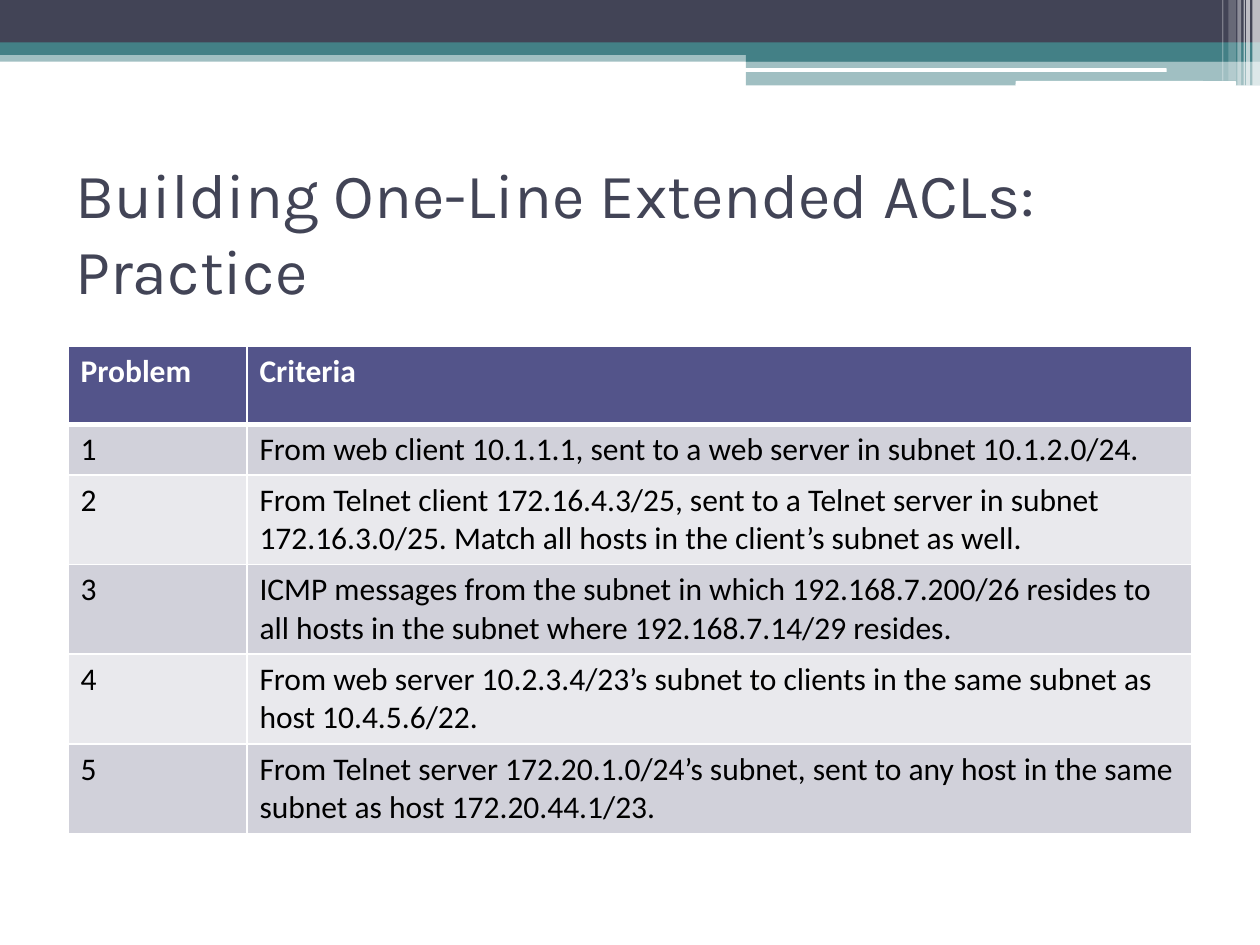
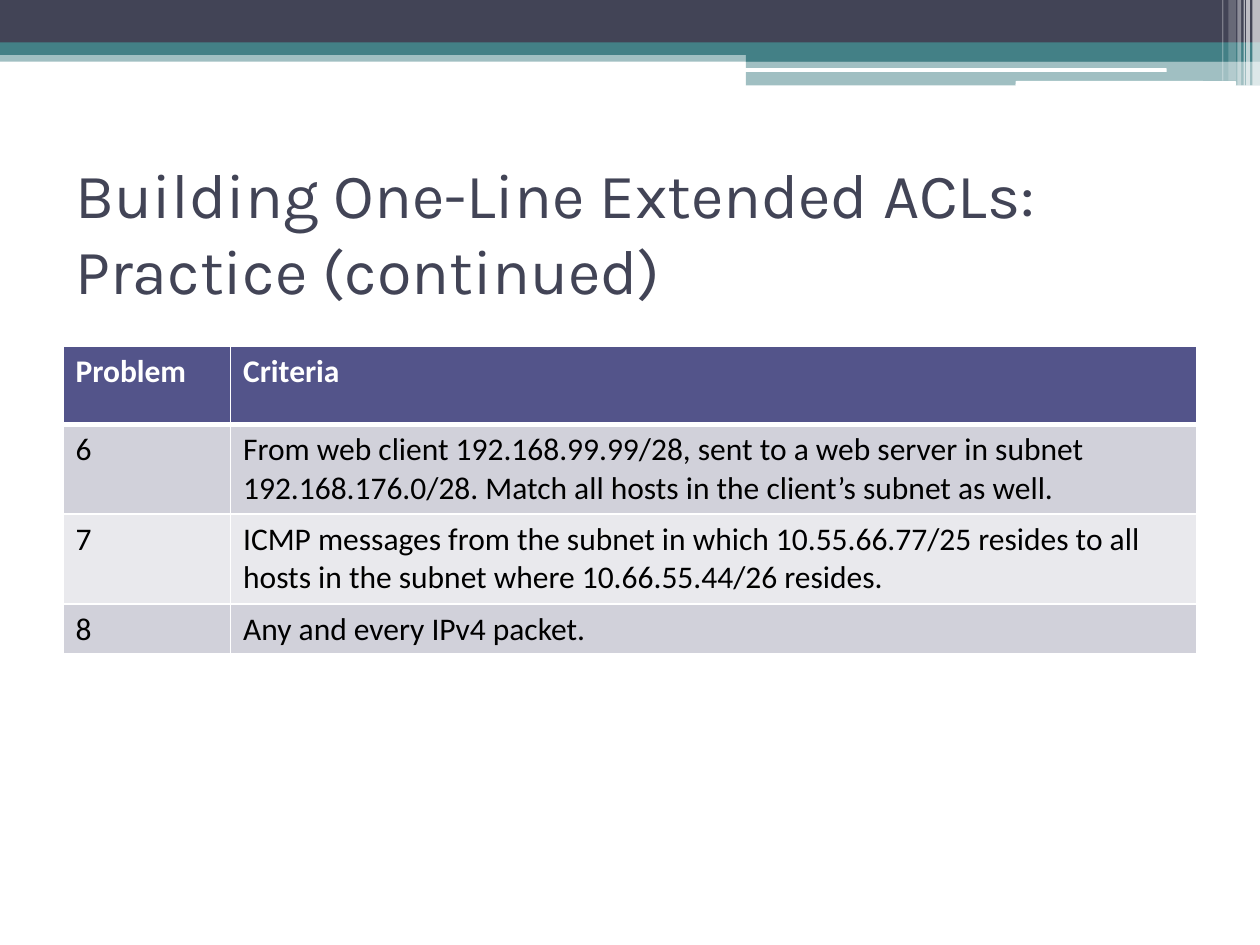
from dataclasses import dataclass
from pptx import Presentation
from pptx.dml.color import RGBColor as RGB
from pptx.enum.shapes import MSO_SHAPE as SHAPE
from pptx.enum.text import MSO_ANCHOR as ANCHOR
from pptx.oxml.ns import qn
from pptx.util import Pt
from lxml.etree import SubElement, Element

HEADER = ("Problem", "Criteria")
SLIDES = [
    {
        "title": "Building One-Line Extended ACLs: Practice",
        "columns": (102.24, 540),
        "problems": [
            "From web client 10.1.1.1, sent to a web server in subnet 10.1.2.0/24.",
            "From Telnet client 172.16.4.3/25, sent to a Telnet server in subnet 172.16.3.0/25. "
            "Match all hosts in the client’s subnet as well.",
            "ICMP messages from the subnet in which 192.168.7.200/26 resides to all hosts "
            "in the subnet where 192.168.7.14/29 resides.",
            "From web server 10.2.3.4/23’s subnet to clients in the same subnet as host 10.4.5.6/22.",
            "From Telnet server 172.20.1.0/24’s subnet, sent to any host in the same subnet "
            "as host 172.20.44.1/23.",
        ],
    },
    {
        "title": "Building One-Line Extended ACLs: Practice (continued)",
        "columns": (95.76, 552.24),
        "problems": [
            "From web client 192.168.99.99/28, sent to a web server in subnet 192.168.176.0/28. "
            "Match all hosts in the client’s subnet as well.",
            "ICMP messages from the subnet in which 10.55.66.77/25 resides to all hosts "
            "in the subnet where 10.66.55.44/26 resides.",
            "Any and every IPv4 packet.",
        ],
    },
]


@dataclass(frozen=True)
class Theme:
    ink: str = "424456"
    teal: str = "438086"
    white: str = "FFFFFF"
    black: str = "000000"
    header: str = "53548A"
    bands: tuple = ("D1D1DA", "E9E9ED")
    title_font: str = "Karla"
    body_font: str = "Calibri"
    title_size: int = 36
    body_size: int = 18
    thin: int = 1
    thick: int = 3


T = Theme()
WIDTH, HEIGHT = 720, 540
TITLE_BOX = (36, 90, 648, 84)
TABLE_TOP = 198
HEADER_ROW, ONE_LINE_ROW, TWO_LINE_ROW = 44.64, 28, 51.2
LINE_CHARS = 72

TAB_LEFT = 426.24
TAB_WIDTH = WIDTH - TAB_LEFT
BANDS = [
    (SHAPE.RECTANGLE, (0, 28.8, WIDTH, 6.5), T.teal, 50),
    (SHAPE.RECTANGLE, (0, 0, WIDTH, 24.48), T.ink, 100),
    (SHAPE.RECTANGLE, (0, 24.2, WIDTH, 7.2), T.teal, 100),
    (SHAPE.RECTANGLE, (TAB_LEFT, 28.08, TAB_WIDTH, 7.2), T.teal, 100),
    (SHAPE.RECTANGLE, (TAB_LEFT, 34.9, TAB_WIDTH, 14), T.teal, 50),
    (SHAPE.ROUNDED_RECTANGLE, (425.5, 39, 241.2, 2.16), T.white, 100),
    (SHAPE.ROUNDED_RECTANGLE, (580.32, 46.3, 126, 2.8), T.white, 100),
]
STRIPES = [
    (715.68, 4.32, 48.96, 65),
    (712.08, 2.16, 48.96, 65),
    (710.64, 0.72, 48.96, 60),
    (707.04, 2.16, 48.96, 40),
    (702, 4.32, 46.08, 20),
    (698.4, 0.72, 46.08, 30),
]
BANDS += [(SHAPE.RECTANGLE, (x, 0, w, h), T.white, a) for x, w, h, a in STRIPES]


def add_band(s, kind, box, color, opacity):
    sp = s.shapes.add_shape(kind, *map(Pt, box))
    sp.shadow.inherit = False
    sp.line.fill.background()
    sp.fill.solid()
    sp.fill.fore_color.rgb = RGB.from_string(color)
    if opacity < 100:
        clr = sp.fill._xPr.find(".//" + qn("a:srgbClr"))
        SubElement(clr, qn("a:alpha"), val=str(opacity * 1000))


def write(tf, text, color, **font):
    r = tf.paragraphs[0].add_run()
    r.text = text
    r.font.color.rgb = RGB.from_string(color)
    for name, value in font.items():
        setattr(r.font, name, value)


def add_title(s, text):
    tf = s.shapes.add_textbox(*map(Pt, TITLE_BOX)).text_frame
    tf.word_wrap = True
    tf.vertical_anchor = ANCHOR.MIDDLE
    write(tf, text, T.ink, name=T.title_font, size=Pt(T.title_size))


def set_borders(cell, top, bottom):
    tcPr = cell._tc.get_or_add_tcPr()
    widths = {"lnL": T.thin, "lnR": T.thin, "lnT": top, "lnB": bottom}
    for i, (side, width) in enumerate(widths.items()):
        ln = Element(qn("a:" + side), w=str(Pt(width)))
        fill = SubElement(ln, qn("a:solidFill"))
        SubElement(fill, qn("a:srgbClr"), val=T.white)
        tcPr.insert(i, ln)


def add_problems(s, columns, problems, first):
    rows = [HEADER] + [(str(n), text) for n, text in enumerate(problems, first)]
    heights = [HEADER_ROW] + [
        TWO_LINE_ROW if len(text) > LINE_CHARS else ONE_LINE_ROW for text in problems
    ]
    width = sum(columns)
    box = ((WIDTH - width) / 2, TABLE_TOP, width, sum(heights))
    table = s.shapes.add_table(len(rows), len(columns), *map(Pt, box)).table
    table.first_row = table.horz_banding = False
    for column, w in zip(table.columns, columns):
        column.width = Pt(w)
    for i, (row, h) in enumerate(zip(rows, heights)):
        table.rows[i].height = Pt(h)
        head = i == 0
        for j, text in enumerate(row):
            cell = table.cell(i, j)
            cell.fill.solid()
            cell.fill.fore_color.rgb = RGB.from_string(T.header if head else T.bands[(i - 1) % 2])
            write(cell.text_frame, text, T.white if head else T.black,
                  name=T.body_font, size=Pt(T.body_size), bold=head)
            set_borders(cell, T.thick if i == 1 else T.thin, T.thick if head else T.thin)


def main():
    prs = Presentation()
    prs.slide_width, prs.slide_height = Pt(WIDTH), Pt(HEIGHT)
    first = 1
    for content in SLIDES:
        s = prs.slides.add_slide(prs.slide_layouts[6])
        for band in BANDS:
            add_band(s, *band)
        add_title(s, content["title"])
        add_problems(s, content["columns"], content["problems"], first)
        first += len(content["problems"])
    prs.save("out.pptx")


if __name__ == "__main__":
    main()
